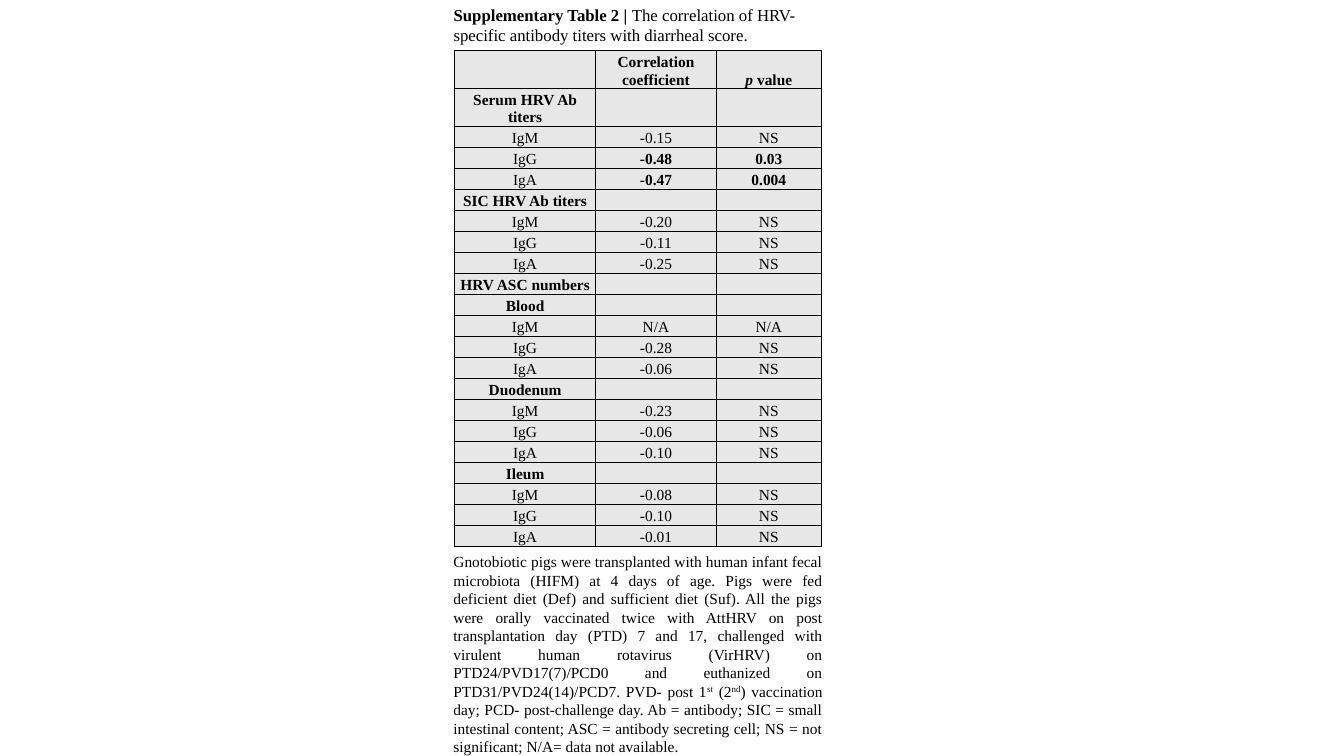
from dataclasses import dataclass

from lxml.etree import SubElement
from pptx import Presentation
from pptx.dml.color import RGBColor
from pptx.enum.text import MSO_ANCHOR, MSO_AUTO_SIZE, PP_ALIGN
from pptx.oxml.ns import qn
from pptx.util import Pt


@dataclass(frozen=True)
class Theme:
    face: str = "Times New Roman"
    ink: str = "000000"
    fill: str = "E7E7E7"
    head: float = 12
    body: float = 11
    rule: float = 1


class Sheet:
    """Holds the theme and the current slide."""

    def __init__(self, deck, theme):
        self.theme = theme
        self.slide = deck.slides.add_slide(deck.slide_layouts[5])

    def text(self, para, parts, size, align, bold=None):
        """Fill a paragraph with (text, style) parts."""
        font = para.font
        font.name, font.size, font.bold = self.theme.face, Pt(size), bold
        font.color.rgb = RGBColor.from_string(self.theme.ink)
        para.alignment = align
        for words, style in parts:
            run = para.add_run()
            run.text = words
            if style == "bold":
                run.font.bold = True
            elif style == "italic":
                run.font.italic = True
            elif style == "super":
                run._r.get_or_add_rPr().set("baseline", "30000")

    def place(self, shape, box, parts, size, align):
        """Set the frame of a text shape and fill it."""
        shape.left, shape.top, shape.width, shape.height = map(Pt, box)
        frame = shape.text_frame
        frame.word_wrap = True
        frame.auto_size = MSO_AUTO_SIZE.SHAPE_TO_FIT_TEXT
        frame.vertical_anchor = MSO_ANCHOR.TOP
        self.text(frame.paragraphs[0], parts, size, align)

    def title(self, box, parts):
        self.place(self.slide.shapes.title, box, parts,
                   self.theme.head, PP_ALIGN.LEFT)

    def note(self, box, parts):
        shape = self.slide.shapes.add_textbox(*map(Pt, box))
        self.place(shape, box, parts, self.theme.body, PP_ALIGN.JUSTIFY)

    def cell(self, cell, parts, bold):
        """Set text, rules and fill of one table cell."""
        cell.margin_left = cell.margin_right = cell.margin_top = Pt(0.7)
        cell.margin_bottom = Pt(0)
        cell.vertical_anchor = MSO_ANCHOR.BOTTOM
        para = cell.text_frame.paragraphs[0]
        self.text(para, parts, self.theme.body, PP_ALIGN.CENTER, bold)
        if not parts:
            # An empty cell needs its own size to keep the row low
            size = str(int(self.theme.body * 100))
            SubElement(para._p, qn("a:endParaRPr"), sz=size)
        props = cell._tc.get_or_add_tcPr()
        for side in ("lnL", "lnR", "lnT", "lnB"):
            line = SubElement(props, qn(f"a:{side}"), w=str(Pt(self.theme.rule)))
            paint = SubElement(line, qn("a:solidFill"))
            SubElement(paint, qn("a:srgbClr"), val=self.theme.ink)
        cell.fill.solid()
        cell.fill.fore_color.rgb = RGBColor.from_string(self.theme.fill)

    def table(self, left, top, widths, heights, rows):
        """Add a table; each row is a list of (parts, bold) cells."""
        shape = self.slide.shapes.add_table(
            len(rows), len(widths), Pt(left), Pt(top),
            Pt(sum(widths)), Pt(sum(heights)))
        grid = shape.table
        for col, width in zip(grid.columns, widths):
            col.width = Pt(width)
        for row, height, cells in zip(grid.rows, heights, rows):
            row.height = Pt(height)
            for cell, (parts, bold) in zip(row.cells, cells):
                self.cell(cell, parts, bold)


# Table content: section heading, then (coefficient, p value) per antibody
KINDS = ("IgM", "IgG", "IgA")
GROUPS = (
    ("Serum HRV Ab titers", (("-0.15", "NS"), ("-0.48", "0.03"), ("-0.47", "0.004"))),
    ("SIC HRV Ab titers", (("-0.20", "NS"), ("-0.11", "NS"), ("-0.25", "NS"))),
    ("HRV ASC numbers", ()),
    ("Blood", (("N/A", "N/A"), ("-0.28", "NS"), ("-0.06", "NS"))),
    ("Duodenum", (("-0.23", "NS"), ("-0.06", "NS"), ("-0.10", "NS"))),
    ("Ileum", (("-0.08", "NS"), ("-0.10", "NS"), ("-0.01", "NS"))),
)
CAPTION = (
    ("Supplementary Table 2 | ", "bold"),
    ("The correlation of HRV-specific antibody titers with diarrheal score.", ""),
)
NOTE = (
    ("Gnotobiotic pigs were transplanted with human infant fecal microbiota "
     "(HIFM) at 4 days of age. Pigs were fed deficient diet (Def) and "
     "sufficient diet (Suf). All the pigs were orally vaccinated twice with "
     "AttHRV on post transplantation day (PTD) 7 and 17, challenged with "
     "virulent human rotavirus (VirHRV) on PTD24/PVD17(7)/PCD0 and euthanized "
     "on PTD31/PVD24(14)/PCD7. PVD- post 1", ""),
    ("st", "super"),
    (" (2", ""),
    ("nd", "super"),
    (") vaccination day; PCD- post-challenge day. Ab = antibody; SIC = small "
     "intestinal content; ASC = antibody secreting cell; NS = not significant; "
     "N/A= data not available.", ""),
)


def build_rows():
    empty = ((), False)
    rows = [[empty, ([("Correlation coefficient", "")], True),
             ([("p", "italic"), (" value", "")], True)]]
    for name, values in GROUPS:
        rows.append([([(name, "")], True), empty, empty])
        for kind, (score, chance) in zip(KINDS, values):
            strong = chance.startswith("0.")  # significant results are bold
            rows.append([([(kind, "")], False), ([(score, "")], strong),
                         ([(chance, "")], strong)])
    return rows


def main():
    deck = Presentation()
    deck.slide_width, deck.slide_height = Pt(960), Pt(540)
    sheet = Sheet(deck, Theme())

    # Caption
    sheet.title((316.8, 0, 292.3, 51.1), CAPTION)

    # Correlations: the first two rows hold two lines of text
    rows = build_rows()
    heights = [25.2] * 2 + [15] * (len(rows) - 2)
    sheet.table(324.7, 36, (100.8, 86.2, 75), heights, rows)

    # Explanation below the table
    sheet.note((316.8, 391, 277.9, 154.1), NOTE)

    deck.save("out.pptx")


if __name__ == "__main__":
    main()
